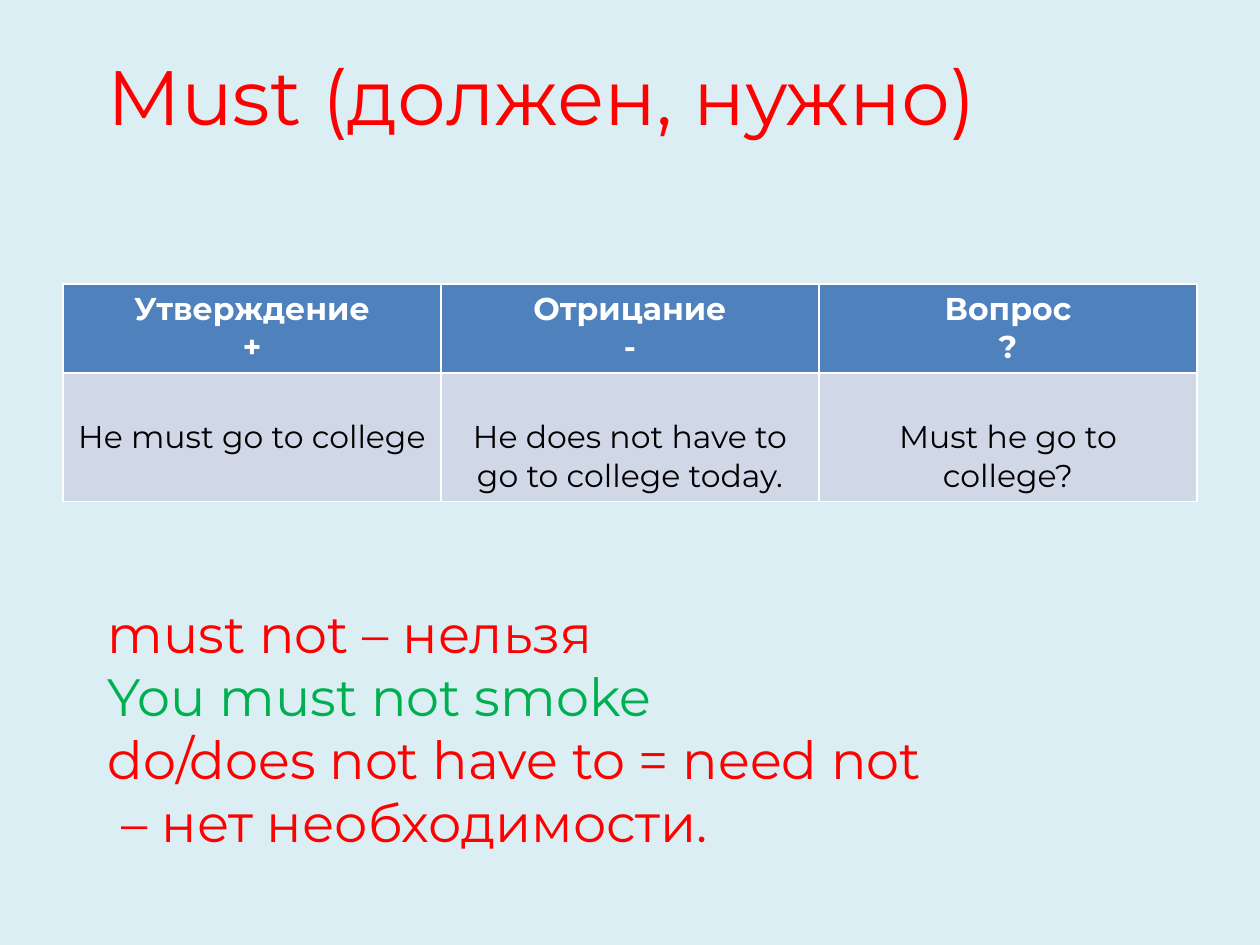
from pptx import Presentation
from pptx.dml.color import RGBColor
from pptx.enum.text import MSO_ANCHOR, MSO_AUTO_SIZE, PP_ALIGN
from pptx.util import Emu, Pt

MIDDLE, TOP = MSO_ANCHOR.MIDDLE, MSO_ANCHOR.TOP
LEFT, CENTER = PP_ALIGN.LEFT, PP_ALIGN.CENTER
NO_FIT = MSO_AUTO_SIZE.NONE
RED, GREEN, WHITE, BLACK = "FF0000", "00B050", "FFFFFF", "000000"


def px(n):
    return Emu(round(n * 914400 / 126))


def style(p, size, color, align, bold=False):
    p.alignment = align
    p.space_before = Pt(0)
    for r in p.runs:
        r.font.name = "Montserrat"
        r.font.size = Pt(size)
        r.font.bold = bold
        r.font.color.rgb = RGBColor.from_string(color)


prs = Presentation()
prs.slide_width, prs.slide_height = px(1260), px(945)
s = prs.slides.add_slide(prs.slide_layouts[1])
s.background.fill.solid()
s.background.fill.fore_color.rgb = RGBColor.from_string("DBEEF4")

title, body = s.placeholders
boxes = [(title, 25, 140, MIDDLE), (body, 595, 270, TOP)]
for sp, top, height, anchor in boxes:
    sp.left, sp.top, sp.width, sp.height = px(95), px(top), px(1134), px(height)
    sp.text_frame.auto_size = NO_FIT
    sp.text_frame.vertical_anchor = anchor

title.text_frame.text = "Must (должен, нужно)"
style(title.text_frame.paragraphs[0], 44, RED, LEFT)

lines = [
    ("must not – нельзя", RED, 0),
    ("You must not smoke", GREEN, 0),
    ("do/does not have to = need not", RED, 0),
    ("– нет необходимости.", RED, 14),
]
tf = body.text_frame
tf.text = "\n".join(text for text, color, indent in lines)
for p, (text, color, indent) in zip(tf.paragraphs, lines):
    style(p, 30, color, LEFT)
    pPr = p._p.get_or_add_pPr()
    pPr.set("marL", str(px(indent)))
    pPr.set("indent", "0")
    pPr.insert_element_before(pPr.makeelement(
        "{http://schemas.openxmlformats.org/drawingml/2006/main}buNone", {}),
        "a:tabLst", "a:defRPr", "a:extLst")

rows = [
    (["Утверждение\n+", "Отрицание\n-", "Вопрос\n?"], 89, 6, "4F81BD", WHITE, True),
    (["He must go to college", "He does not have to go to college today.",
      "Must he go to college?"], 128, 45, "D0D8E8", BLACK, False),
]
table = s.shapes.add_table(2, 3, px(63), px(284), px(1134), px(217)).table
for i, (texts, height, margin, fill, color, bold) in enumerate(rows):
    table.rows[i].height = px(height)
    for j, text in enumerate(texts):
        cell = table.cell(i, j)
        cell.margin_top = px(margin)
        cell.fill.solid()
        cell.fill.fore_color.rgb = RGBColor.from_string(fill)
        cell.text_frame.text = text
        for p in cell.text_frame.paragraphs:
            style(p, 18, color, CENTER, bold)

prs.save("out.pptx")
